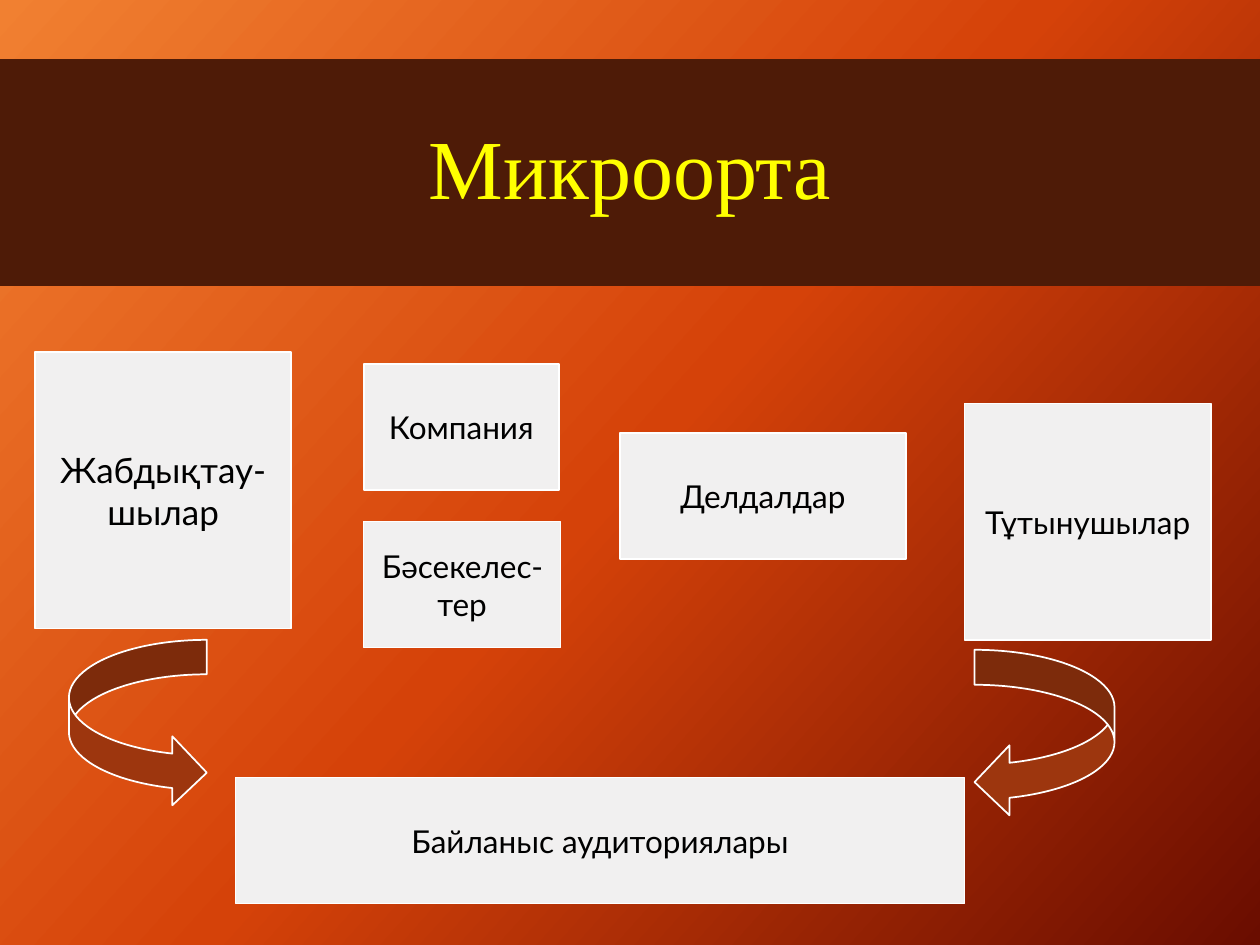
"""Build the micro-environment slide: a title band, labelled boxes and two curved arrows."""
import copy

import pptx
import pptx.dml.color
import pptx.enum.shapes
import pptx.enum.text
import pptx.util

Pt = pptx.util.Pt
KINDS = pptx.enum.shapes.MSO_SHAPE
MIDDLE = pptx.enum.text.MSO_ANCHOR.MIDDLE
CENTER = pptx.enum.text.PP_ALIGN.CENTER

SIZE = (720, 540)
TITLE = ("Микроорта", (0, 33.8, 720, 129.6))
ROW = 72
BOXES = [
    ("Жабдықтау-шылар", "large", (20, 201.2, 146.5, 158)),
    ("Компания", "body", (207.8, 208.1, 111.6, ROW)),
    ("Бәсекелес-тер", "body", (207.8, 298.1, 112.6, ROW)),
    ("Делдалдар", "body", (354.3, 247.5, 163.4, ROW)),
    ("Тұтынушылар", "body", (551.2, 230.6, 140.7, 135)),
    ("Байланыс аудиториялары", "body", (134.6, 444.4, 416.6, ROW)),
]
ARROWS = [
    (KINDS.CURVED_RIGHT_ARROW, (39.4, 365.6, 78.8, 95.6)),
    (KINDS.CURVED_LEFT_ARROW, (556.9, 371.3, 80, 95.6)),
]
THEME = {
    "back": [(0, "F18031"), (0.5, "D54209"), (1, "6A0D00")],
    "angle": 318,
    "band": "4E1B07",
    "box": "F1F0F0",
    "arrow": "9D360E",
    "line": "FFFFFF",
    "title": {"name": "Times New Roman", "size": Pt(48), "color": "FFFF00"},
    "large": {"name": "Lato", "size": Pt(20), "color": "000000"},
    "body": {"name": "Lato", "size": Pt(18), "color": "000000"},
}


def tint(text):
    return pptx.dml.color.RGBColor.from_string(text)


def paint(shape, color):
    shape.fill.solid()
    shape.fill.fore_color.rgb = tint(color)


def write(shape, text, style):
    frame = shape.text_frame
    frame.text = text
    frame.word_wrap = True
    frame.vertical_anchor = MIDDLE
    para = frame.paragraphs[0]
    para.alignment = CENTER
    font = para.runs[0].font
    for key, value in THEME[style].items():
        if key == "color":
            font.color.rgb = tint(value)
        else:
            setattr(font, key, value)
    return para


def draw(slide, kind, place, color):
    shape = slide.shapes.add_shape(kind, *map(Pt, place))
    shape.shadow.inherit = False
    paint(shape, color)
    shape.line.color.rgb = tint(THEME["line"])
    shape.line.width = Pt(1)
    return shape


def shade(slide):
    fill = slide.background.fill
    fill.gradient()
    fill.gradient_angle = THEME["angle"]
    stops = slide.element.xpath(".//a:gsLst")[0]
    stops.append(copy.deepcopy(stops[0]))
    for stop, (place, color) in zip(fill.gradient_stops, THEME["back"]):
        stop.position = place
        stop.color.rgb = tint(color)


def main():
    deck = pptx.Presentation()
    deck.slide_width, deck.slide_height = map(Pt, SIZE)
    slide = deck.slides.add_slide(deck.slide_layouts[5])
    shade(slide)

    text, place = TITLE
    title = slide.shapes.title
    for name, value in zip(("left", "top", "width", "height"), place):
        setattr(title, name, Pt(value))
    paint(title, THEME["band"])
    write(title, text, "title").line_spacing = 0.9

    for text, style, place in BOXES:
        write(draw(slide, KINDS.RECTANGLE, place, THEME["box"]), text, style)
    for kind, place in ARROWS:
        draw(slide, kind, place, THEME["arrow"])
    deck.save("out.pptx")


if __name__ == "__main__":
    main()
